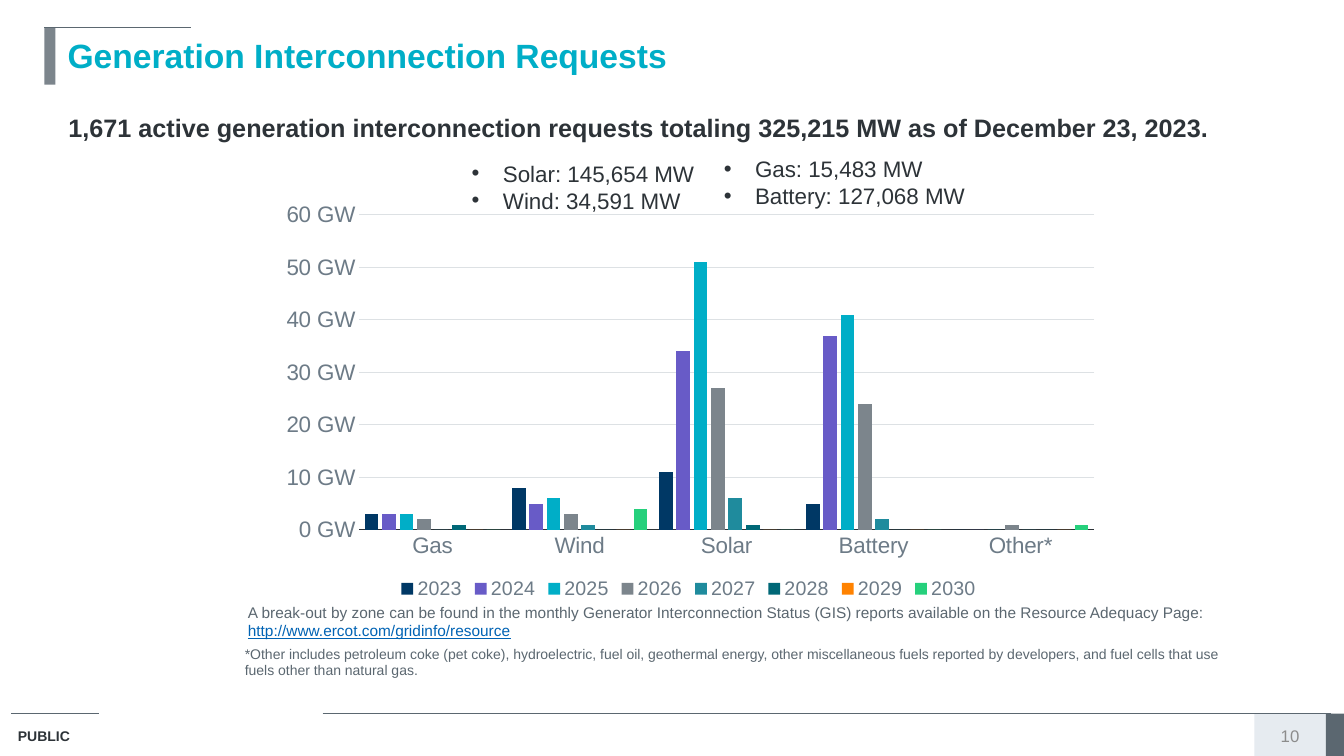
from dataclasses import dataclass
from typing import Optional

from lxml.etree import SubElement
from pptx import Presentation
from pptx.chart.data import CategoryChartData
from pptx.dml.color import RGBColor
from pptx.enum.chart import XL_CHART_TYPE, XL_LEGEND_POSITION, XL_TICK_MARK
from pptx.enum.shapes import MSO_CONNECTOR, MSO_SHAPE
from pptx.enum.text import MSO_ANCHOR, PP_ALIGN
from pptx.oxml.ns import qn
from pptx.util import Inches, Pt

FONT = "Arial"
INK = RGBColor(0x2D, 0x33, 0x38)
SLATE = RGBColor(0x5B, 0x67, 0x70)
GRAY = RGBColor(0x7C, 0x85, 0x8C)
PALE = RGBColor(0xE6, 0xEB, 0xF0)
CYAN = RGBColor(0x00, 0xAE, 0xC7)
LINK_BLUE = RGBColor(0x00, 0x63, 0xB4)
NUMBER_GRAY = RGBColor(0x8C, 0x8C, 0x8C)
AXIS_TEXT = RGBColor(0x6D, 0x7B, 0x87)
GRID = RGBColor(0xDD, 0xE1, 0xE4)


@dataclass
class Bar:
    left: float
    top: float
    width: float
    height: float
    color: RGBColor


@dataclass
class Rule:
    left: float
    right: float
    y: float


@dataclass
class Run:
    text: str
    size: int
    color: RGBColor = INK
    bold: bool = False
    underline: bool = False


@dataclass
class Paragraph:
    runs: list[Run]
    bullet_margin: Optional[float] = None
    space_before: int = 0


@dataclass
class TextBox:
    left: float
    top: float
    width: float
    height: float
    paragraphs: list[Paragraph]
    align: PP_ALIGN = PP_ALIGN.LEFT
    anchor: MSO_ANCHOR = MSO_ANCHOR.TOP


@dataclass
class Year:
    name: str
    gigawatts: tuple[int, ...]
    color: RGBColor


BARS = [
    Bar(12.44, 7.08, 0.78, 0.42, PALE),
    Bar(13.15, 7.08, 0.18, 0.42, SLATE),
    Bar(0.44, 0.27, 0.11, 0.57, GRAY),
]
RULES = [Rule(0.11, 0.98, 7.08), Rule(3.2, 13.2, 7.08), Rule(0.44, 1.89, 0.27)]

FUELS = ["Gas", "Wind", "Solar", "Battery", "Other*"]
YEARS = [
    Year("2023", (3, 8, 11, 5, 0), RGBColor(0x00, 0x38, 0x65)),
    Year("2024", (3, 5, 34, 37, 0), RGBColor(0x68, 0x5B, 0xC7)),
    Year("2025", (3, 6, 51, 41, 0), CYAN),
    Year("2026", (2, 3, 27, 24, 1), GRAY),
    Year("2027", (0, 1, 6, 2, 0), RGBColor(0x1F, 0x8B, 0x9D)),
    Year("2028", (1, 0, 1, 0, 0), RGBColor(0x00, 0x68, 0x77)),
    Year("2029", (0, 0, 0, 0, 0), RGBColor(0xFF, 0x82, 0x00)),
    Year("2030", (0, 4, 0, 0, 1), RGBColor(0x26, 0xD0, 0x7C)),
]

TEXT_BOXES = [
    TextBox(0.08, 7.17, 1.36, 0.27, [Paragraph([Run("PUBLIC", 10, bold=True)])]),
    TextBox(12.44, 7.18, 0.71, 0.24, [Paragraph([Run("10", 12, NUMBER_GRAY)])],
            PP_ALIGN.CENTER, MSO_ANCHOR.MIDDLE),
    TextBox(2.36, 5.93, 9.98, 0.47, [Paragraph([
        Run("A break-out by zone can be found in the monthly Generator Interconnection "
            "Status (GIS) reports available on the Resource Adequacy Page: ", 11, SLATE),
        Run("http://www.ercot.com/gridinfo/resource", 11, LINK_BLUE, underline=True),
    ])]),
    TextBox(2.33, 6.35, 10.58, 0.44, [
        Paragraph([Run("*Other includes petroleum coke (pet coke), hydroelectric, fuel oil, "
                       "geothermal energy, other miscellaneous fuels reported by developers, "
                       "and fuel cells that use", 10, SLATE)]),
        Paragraph([Run("fuels other than natural gas.", 10, SLATE)]),
    ]),
    TextBox(0.58, 1.07, 11.65, 1.1, [
        Paragraph([Run("1,671 active generation interconnection requests totaling "
                       "325,215 MW as of December 23, 2023.", 18, bold=True)]),
        Paragraph([Run("Solar: 145,654 MW", 16)], 4.31, 12),
        Paragraph([Run("Wind: 34,591 MW", 16)], 4.31),
    ]),
    TextBox(7.08, 1.49, 3.11, 0.64, [
        Paragraph([Run("Gas: 15,483 MW", 16)], 0.31),
        Paragraph([Run("Battery: 127,068 MW", 16)], 0.31),
    ]),
]


def style_font(font, size: int, color: RGBColor, bold: bool = False) -> None:
    font.name = FONT
    font.size = Pt(size)
    font.bold = bold
    font.color.rgb = color


def add_bar(slide, bar: Bar) -> None:
    shape = slide.shapes.add_shape(MSO_SHAPE.RECTANGLE, Inches(bar.left), Inches(bar.top),
                                   Inches(bar.width), Inches(bar.height))
    shape.shadow.inherit = False
    shape.fill.solid()
    shape.fill.fore_color.rgb = bar.color
    shape.line.fill.background()


def add_rule(slide, rule: Rule) -> None:
    connector = slide.shapes.add_connector(MSO_CONNECTOR.STRAIGHT, Inches(rule.left), Inches(rule.y),
                                           Inches(rule.right), Inches(rule.y))
    connector.line.color.rgb = SLATE
    connector.line.width = Pt(0.75)
    SubElement(connector._element.spPr, qn("a:effectLst"))


def add_bullet(paragraph, margin: float) -> None:
    properties = paragraph._p.get_or_add_pPr()
    properties.set("marL", str(Inches(margin)))
    properties.set("indent", str(-Inches(0.31)))
    SubElement(properties, qn("a:buFont")).set("typeface", FONT)
    SubElement(properties, qn("a:buChar")).set("char", "•")


def add_text(slide, box: TextBox) -> None:
    frame = slide.shapes.add_textbox(Inches(box.left), Inches(box.top),
                                     Inches(box.width), Inches(box.height)).text_frame
    frame.word_wrap = True
    frame.vertical_anchor = box.anchor
    for index, item in enumerate(box.paragraphs):
        paragraph = frame.add_paragraph() if index else frame.paragraphs[0]
        paragraph.alignment = box.align
        if item.space_before:
            paragraph.space_before = Pt(item.space_before)
        if item.bullet_margin is not None:
            add_bullet(paragraph, item.bullet_margin)
        for part in item.runs:
            run = paragraph.add_run()
            run.text = part.text
            style_font(run.font, part.size, part.color, part.bold)
            if part.underline:
                run.font.underline = True


def set_title(slide) -> None:
    title = slide.shapes.title
    title.left, title.top, title.width, title.height = map(Inches, (0.57, 0.26, 9.58, 0.58))
    title.text_frame.vertical_anchor = MSO_ANCHOR.MIDDLE
    paragraph = title.text_frame.paragraphs[0]
    paragraph.alignment = PP_ALIGN.LEFT
    run = paragraph.add_run()
    run.text = "Generation Interconnection Requests"
    style_font(run.font, 24, CYAN, True)


def place_plot_area(chart, **fractions: float) -> None:
    """Fix the inner plot area as fractions of the chart frame."""
    plot_area = chart._chartSpace.chart.plotArea
    layout = plot_area.find(qn("c:layout"))
    if layout is None:
        layout = SubElement(plot_area, qn("c:layout"))
        plot_area.insert(0, layout)
    manual = SubElement(layout, qn("c:manualLayout"))
    settings = {"layoutTarget": "inner", "xMode": "edge", "yMode": "edge", **fractions}
    for name, value in settings.items():
        SubElement(manual, qn(f"c:{name}")).set("val", str(value))


def add_request_chart(slide) -> None:
    data = CategoryChartData()
    data.categories = FUELS
    for year in YEARS:
        data.add_series(year.name, year.gigawatts)
    chart = slide.shapes.add_chart(XL_CHART_TYPE.COLUMN_CLUSTERED, Inches(2.64), Inches(1.93),
                                   Inches(8.38), Inches(4.06), data).chart
    style_font(chart.font, 14, INK)
    chart.has_title = False
    chart.has_legend = True
    chart.legend.position = XL_LEGEND_POSITION.BOTTOM
    chart.legend.include_in_layout = False
    style_font(chart.legend.font, 14, AXIS_TEXT)
    place_plot_area(chart, x=0.11, y=0.05, w=0.87, h=0.77)

    plot = chart.plots[0]
    plot.vary_by_categories = False
    plot.gap_width, plot.overlap = 83, -27
    for series, year in zip(plot.series, YEARS):
        series.format.fill.solid()
        series.format.fill.fore_color.rgb = year.color

    value_axis, category_axis = chart.value_axis, chart.category_axis
    for axis in (value_axis, category_axis):
        axis.major_tick_mark = axis.minor_tick_mark = XL_TICK_MARK.NONE
        style_font(axis.tick_labels.font, 16, AXIS_TEXT)
    category_axis.format.line.color.rgb = INK
    category_axis.format.line.width = Pt(0.75)
    value_axis.format.line.fill.background()
    value_axis.minimum_scale, value_axis.maximum_scale, value_axis.major_unit = 0, 60, 10
    value_axis.tick_labels.number_format = '#,##0\\ "GW"'
    value_axis.tick_labels.number_format_is_linked = False
    value_axis.major_gridlines.format.line.color.rgb = GRID
    value_axis.major_gridlines.format.line.width = Pt(0.75)


def main() -> None:
    presentation = Presentation()
    presentation.slide_width, presentation.slide_height = Inches(13.33), Inches(7.5)
    slide = presentation.slides.add_slide(presentation.slide_layouts[5])
    for bar in BARS:
        add_bar(slide, bar)
    for rule in RULES:
        add_rule(slide, rule)
    set_title(slide)
    add_request_chart(slide)
    for box in TEXT_BOXES:
        add_text(slide, box)
    presentation.save("out.pptx")


if __name__ == "__main__":
    main()
